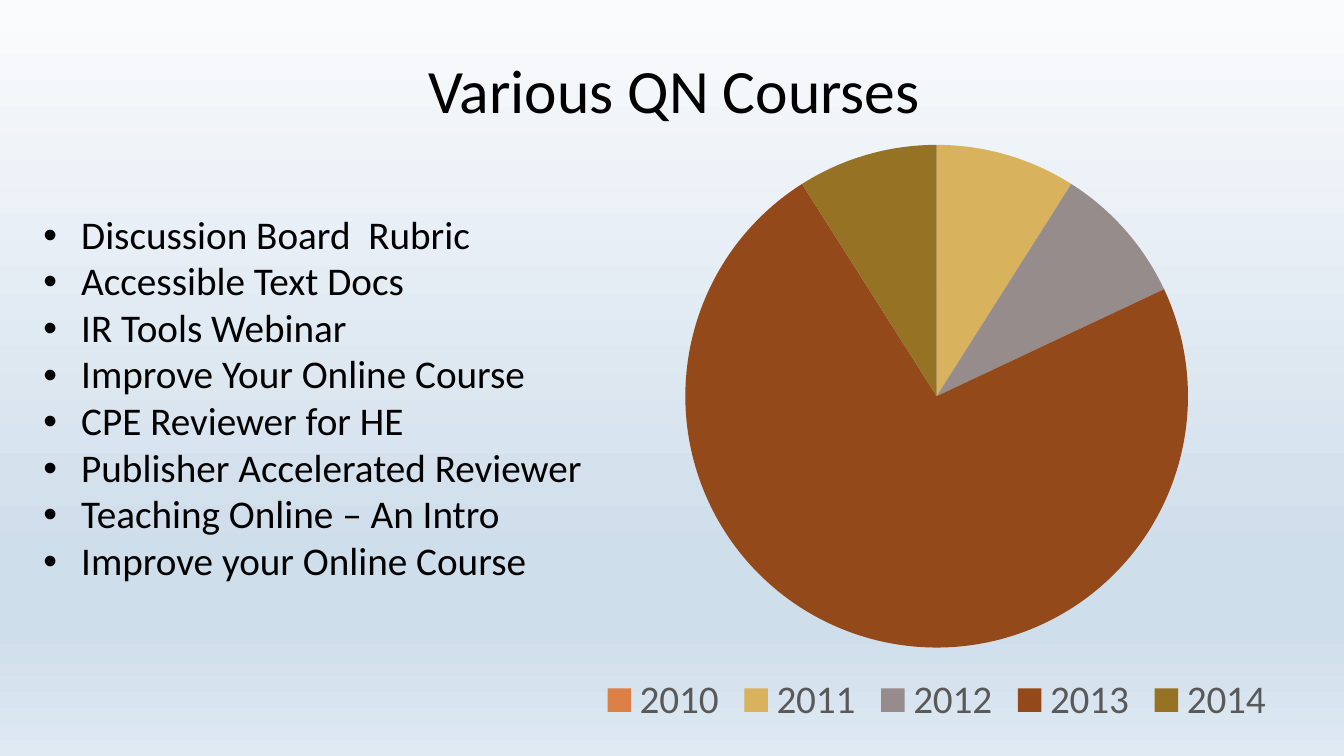
from copy import deepcopy

from pptx import Presentation
from pptx.chart.data import CategoryChartData
from pptx.dml.color import RGBColor
from pptx.enum.chart import XL_CHART_TYPE, XL_LEGEND_POSITION
from pptx.enum.text import MSO_ANCHOR, MSO_AUTO_SIZE, PP_ALIGN
from pptx.util import Cm, Pt

FONT = "Calibri"
BLACK = RGBColor(0x00, 0x00, 0x00)
LEGEND_GREY = RGBColor(0x59, 0x59, 0x59)
PALE = RGBColor(0xFA, 0xFB, 0xFD)
SKY = RGBColor(0xCF, 0xDE, 0xEB)
MIST = RGBColor(0xDF, 0xE9, 0xF2)
BACKDROP = [(0, PALE), (0.74, SKY), (0.83, SKY), (1, MIST)]
YEARS = [
    ("2010", 0, RGBColor(0xDD, 0x80, 0x47)),
    ("2011", 9, RGBColor(0xD8, 0xB2, 0x5C)),
    ("2012", 9, RGBColor(0x96, 0x8C, 0x8C)),
    ("2013", 73, RGBColor(0x94, 0x49, 0x1B)),
    ("2014", 9, RGBColor(0x95, 0x72, 0x24)),
]
COURSES = [
    "Discussion Board  Rubric",
    "Accessible Text Docs",
    "IR Tools Webinar",
    "Improve Your Online Course",
    "CPE Reviewer for HE",
    "Publisher Accelerated Reviewer",
    "Teaching Online – An Intro",
    "Improve your Online Course",
]


def style_font(font, size, color):
    font.name = FONT
    font.size = Pt(size)
    font.color.rgb = color


def place(placeholder, left, top, width, height):
    placeholder.left, placeholder.top = Cm(left), Cm(top)
    placeholder.width, placeholder.height = Cm(width), Cm(height)
    placeholder.text_frame.auto_size = MSO_AUTO_SIZE.NONE
    placeholder.text_frame.word_wrap = True


deck = Presentation()
deck.slide_width, deck.slide_height = Cm(33.87), Cm(19.05)
slide = deck.slides.add_slide(deck.slide_layouts[1])

backdrop = slide.background.fill
backdrop.gradient()
backdrop.gradient_angle = 270
first_stop = backdrop.gradient_stops[0]._gs
for _ in range(len(BACKDROP) - len(backdrop.gradient_stops)):
    first_stop.addnext(deepcopy(first_stop))
for stop, (position, color) in zip(backdrop.gradient_stops, BACKDROP):
    stop.position = position
    stop.color.rgb = color

title = slide.shapes.title
place(title, 2.39, 0.51, 29.21, 3.68)
title.text_frame.text = "Various QN Courses"
title.text_frame.vertical_anchor = MSO_ANCHOR.MIDDLE
heading = title.text_frame.paragraphs[0]
heading.alignment = PP_ALIGN.CENTER
heading.line_spacing = 0.9
style_font(heading.runs[0].font, 44, BLACK)

course_list = slide.placeholders[1]
place(course_list, 0.84, 5.21, 15.52, 12.85)
course_list.text_frame.text = "\n".join(COURSES)
for course in course_list.text_frame.paragraphs:
    course.space_before = Pt(0)
    course.line_spacing = 0.99
    style_font(course.runs[0].font, 28, BLACK)

year_shares = CategoryChartData()
year_shares.categories = [year for year, _, _ in YEARS]
year_shares.add_series("Series 1", [share for _, share, _ in YEARS])
year_pie = slide.shapes.add_chart(
    XL_CHART_TYPE.PIE, Cm(12.19), Cm(3.3), Cm(22.83), Cm(15.14), year_shares
).chart
style_font(year_pie.font, 10, BLACK)
year_pie.has_title = False
year_pie.has_legend = True
year_pie.legend.position = XL_LEGEND_POSITION.BOTTOM
year_pie.legend.include_in_layout = False
style_font(year_pie.legend.font, 28, LEGEND_GREY)
year_pie.plots[0].vary_by_categories = True
for index, (_, _, color) in enumerate(YEARS):
    slice_format = year_pie.plots[0].series[0].points[index].format
    slice_format.fill.solid()
    slice_format.fill.fore_color.rgb = color
    slice_format.line.fill.background()

deck.save("out.pptx")
